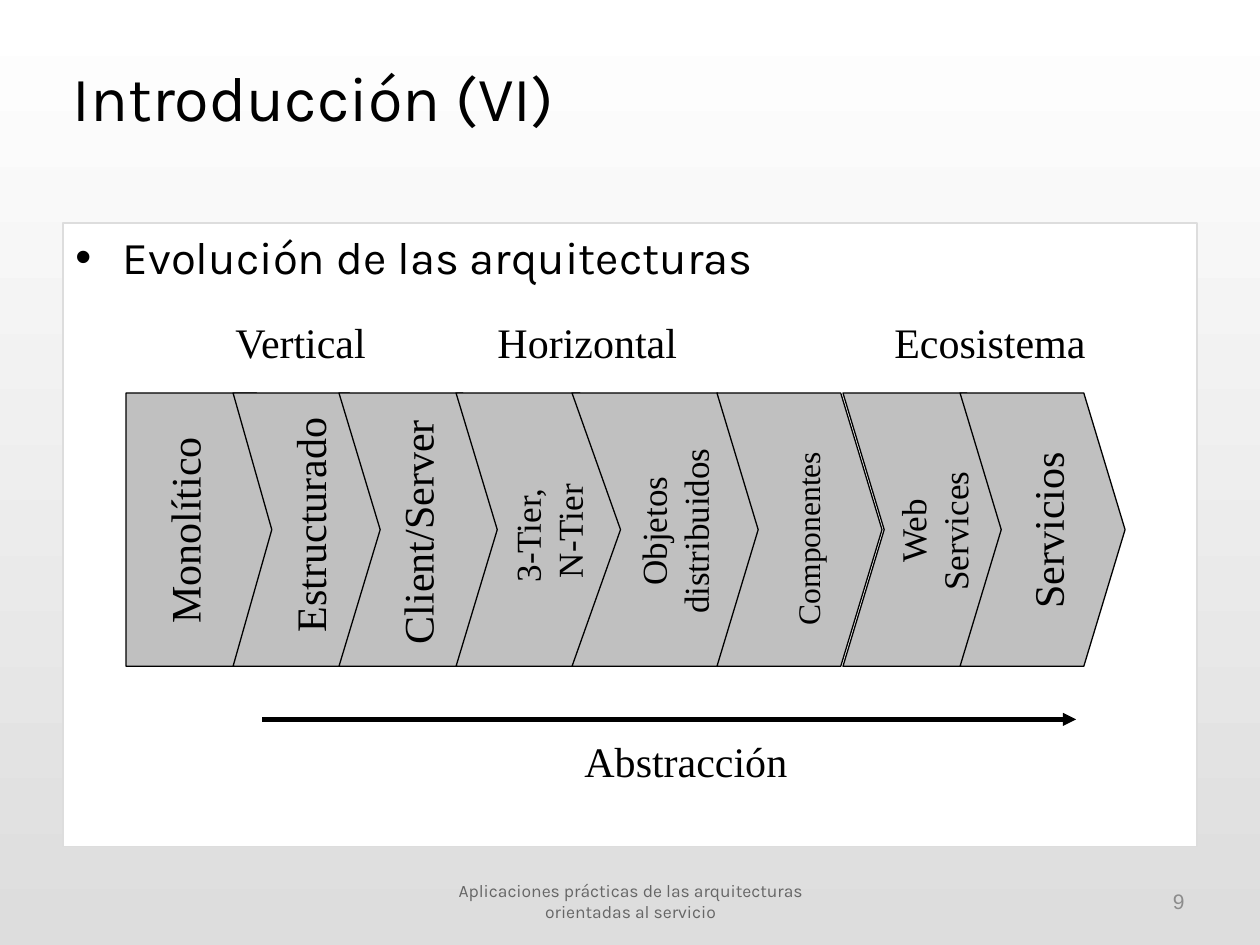
from lxml import etree
from pptx import Presentation
from pptx.dml.color import RGBColor
from pptx.enum.shapes import MSO_CONNECTOR, MSO_SHAPE
from pptx.enum.text import MSO_ANCHOR, MSO_AUTO_SIZE, PP_ALIGN
from pptx.oxml.ns import qn
from pptx.util import Pt

RECTANGLE = MSO_SHAPE.RECTANGLE
PENTAGON = MSO_SHAPE.PENTAGON
CHEVRON = MSO_SHAPE.CHEVRON
STRAIGHT = MSO_CONNECTOR.STRAIGHT
TOP, MIDDLE = MSO_ANCHOR.TOP, MSO_ANCHOR.MIDDLE
GROW, FIXED = MSO_AUTO_SIZE.SHAPE_TO_FIT_TEXT, MSO_AUTO_SIZE.NONE
LEFT, CENTER, RIGHT = PP_ALIGN.LEFT, PP_ALIGN.CENTER, PP_ALIGN.RIGHT

COLORS = {
    "white": "FFFFFF",
    "black": "000000",
    "panel_line": "DDDDDD",
    "stage": "C0C0C0",
    "footer": "666666",
    "number": "8C8C8C",
}
SERIF, SANS = "Times New Roman", "Karla"
STAGE_TOP, STAGE_HEIGHT = 224.6, 156.2

# left, width
STAGES = [
    (72, 99.4), (133.2, 88.6), (193.7, 94.3), (260.6, 94.3),
    (326.9, 110.9), (409.7, 94.3), (481.7, 94.3), (548.6, 94.3),
]
# lines, center x, center y, width, height, size, alignment
STAGE_LABELS = [
    (["Monolítico"], 105.1, 303.1, 121, 36, 24, LEFT),
    (["Estructurado"], 176.8, 299.5, 137.5, 36, 24, LEFT),
    (["Client/Server"], 238.3, 303.1, 144, 36, 24, LEFT),
    (["3-Tier, ", "N-Tier"], 313.2, 303.5, 121, 55.4, 20, CENTER),
    (["Objetos distribuidos"], 385.2, 303.5, 121, 55.4, 20, CENTER),
    (["Componentes"], 461.5, 303.8, 121, 28.8, 18, LEFT),
    (["Web Services"], 533.5, 303.5, 121, 55.4, 20, CENTER),
    (["Servicios"], 598.3, 303.1, 121, 36, 24, CENTER),
]
# text, left, top, width
CAPTIONS = [
    ("Vertical", 127.4, 177.1, 90),
    ("Horizontal", 277.2, 177.1, 118.1),
    ("Ecosistema", 504, 177.1, 125.3),
    ("Abstracción", 326.9, 416.9, 132.5),
]


def rgb(name):
    return RGBColor.from_string(COLORS[name])


def paint_background(page):
    fill = page.background.fill
    fill.gradient()
    fill.gradient_angle = 270
    for stop, name in zip(fill.gradient_stops, ("white", "panel_line")):
        stop.color.rgb = rgb(name)


def add_figure(page, kind, left, top, width, height, fill, line):
    figure = page.shapes.add_shape(kind, Pt(left), Pt(top), Pt(width), Pt(height))
    figure.shadow.inherit = False
    figure.fill.solid()
    figure.fill.fore_color.rgb = rgb(fill)
    figure.line.color.rgb = rgb(line)
    figure.line.width = Pt(0.75)
    return figure


def write_lines(para, lines, size, font, color):
    for index, line in enumerate(lines):
        if index:
            para.add_line_break()
        span = para.add_run()
        span.text = line
        span.font.size = Pt(size)
        span.font.name = font
        span.font.color.rgb = rgb(color)


def add_text(page, lines, left, top, width, height, size, font=SERIF,
             color="black", align=LEFT, anchor=TOP, wrap=True, fit=GROW):
    box = page.shapes.add_textbox(Pt(left), Pt(top), Pt(width), Pt(height))
    frame = box.text_frame
    frame.word_wrap = wrap
    frame.auto_size = fit
    frame.vertical_anchor = anchor
    para = frame.paragraphs[0]
    para.alignment = align
    write_lines(para, lines, size, font, color)
    return box


def add_panel(page, text):
    panel = add_figure(page, RECTANGLE, 36, 127.4, 648, 356.4, "white", "panel_line")
    frame = panel.text_frame
    frame.word_wrap = True
    frame.vertical_anchor = TOP
    para = frame.paragraphs[0]
    para.alignment = LEFT
    properties = para._p.get_or_add_pPr()
    properties.set("marL", str(Pt(27)))
    properties.set("indent", str(Pt(-27)))
    font = etree.SubElement(properties, qn("a:buFont"))
    font.set("typeface", "Arial")
    bullet = etree.SubElement(properties, qn("a:buChar"))
    bullet.set("char", "•")
    write_lines(para, [text], 26, SANS, "black")


def add_stage_label(page, lines, center_x, center_y, width, height, size, align):
    label = add_text(page, lines, center_x - width / 2, center_y - height / 2,
                     width, height, size, align=align)
    label.rotation = 270


def add_arrow(page, start, end, level):
    arrow = page.shapes.add_connector(STRAIGHT, Pt(start), Pt(level), Pt(end), Pt(level))
    arrow.line.color.rgb = rgb("black")
    arrow.line.width = Pt(2.5)
    head = etree.SubElement(arrow.line._get_or_add_ln(), qn("a:tailEnd"))
    head.set("type", "triangle")
    etree.SubElement(arrow._element.spPr, qn("a:effectLst"))


def main():
    deck = Presentation()
    deck.slide_width, deck.slide_height = Pt(720), Pt(540)
    page = deck.slides.add_slide(deck.slide_layouts[6])
    paint_background(page)
    add_text(page, ["Introducción (VI)"], 34.6, 10.1, 463, 90, 36, SANS,
             anchor=MIDDLE, fit=FIXED)
    add_panel(page, "Evolución de las arquitecturas")
    for index, (left, width) in enumerate(STAGES):
        kind = CHEVRON if index else PENTAGON
        stage = add_figure(page, kind, left, STAGE_TOP, width, STAGE_HEIGHT,
                           "stage", "black")
        stage.adjustments[0] = 0.25
    for label in STAGE_LABELS:
        add_stage_label(page, *label)
    for text, left, top, width in CAPTIONS:
        add_text(page, [text], left, top, width, 36, 24, wrap=False)
    add_arrow(page, 149.8, 614.9, 411.1)
    add_text(page, ["9"], 516.2, 500.4, 167.8, 28.8, 12, "Arial", "number",
             RIGHT, MIDDLE, fit=FIXED)
    add_text(page, ["Aplicaciones prácticas de las arquitecturas orientadas al servicio"],
             246.2, 500.4, 228.2, 28.8, 10, SANS, "footer", CENTER, MIDDLE, fit=FIXED)
    deck.save("out.pptx")


if __name__ == "__main__":
    main()
